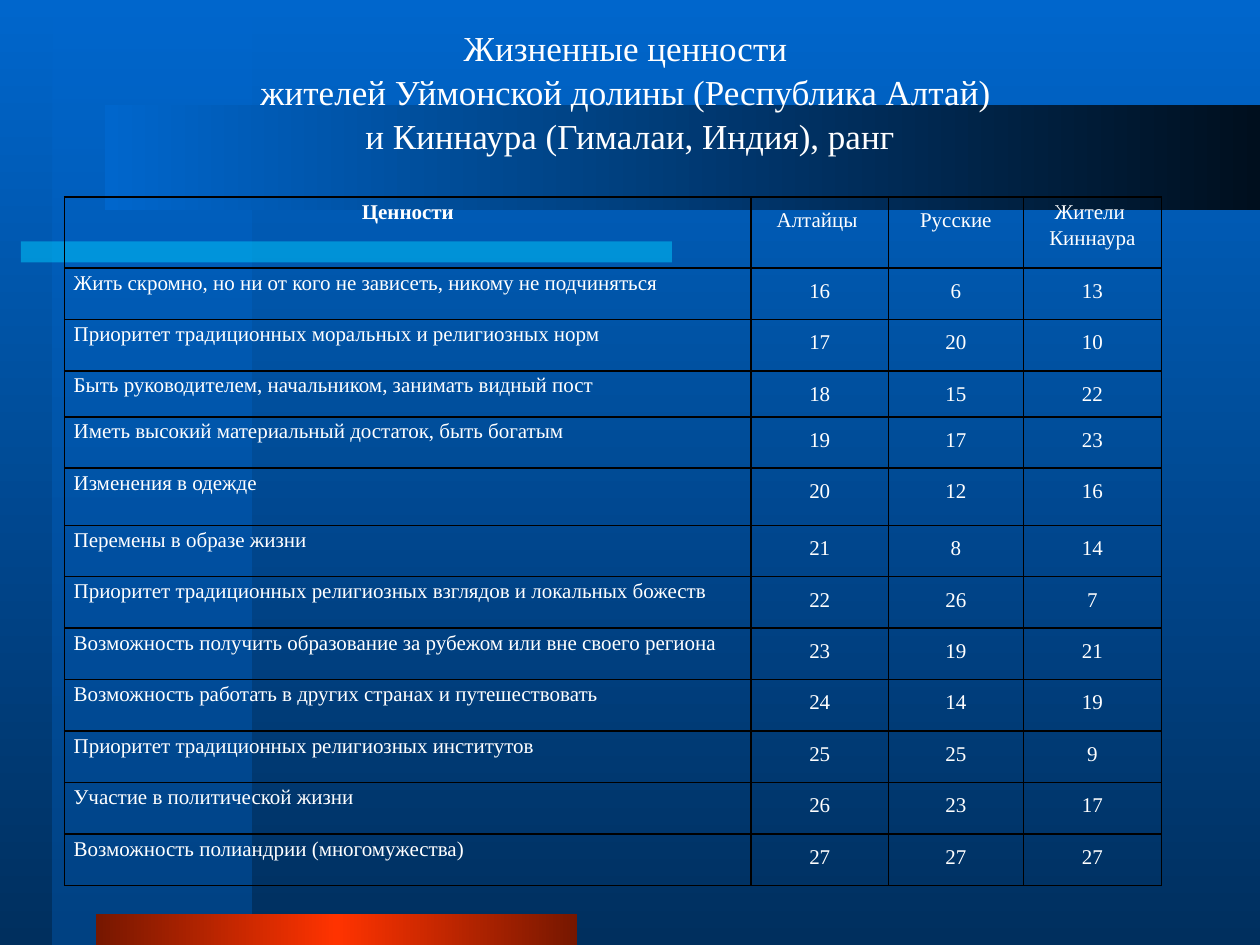
import copy

import lxml.etree
import pptx
import pptx.dml.color
import pptx.enum.shapes
import pptx.enum.text
import pptx.oxml.ns
import pptx.util

Pt = pptx.util.Pt
Color = pptx.dml.color.RGBColor
Align = pptx.enum.text.PP_ALIGN
Anchor = pptx.enum.text.MSO_ANCHOR
qn = pptx.oxml.ns.qn

WHITE = Color(0xFF, 0xFF, 0xFF)
BLACK = Color(0x00, 0x00, 0x00)
BLUE = Color(0x00, 0x66, 0xCC)
MID_BLUE = Color(0x00, 0x53, 0xA6)
NAVY = Color(0x00, 0x2F, 0x5E)
NIGHT = Color(0x00, 0x0F, 0x1E)
CYAN = Color(0x00, 0xCC, 0xFF)
RED = Color(0xFF, 0x33, 0x00)
DARK_RED = Color(0x76, 0x17, 0x00)
FONT = "Times New Roman"

TITLE = (
    "Жизненные ценности \v"
    "жителей Уймонской долины (Республика Алтай) \v"
    "и Киннаура (Гималаи, Индия), ранг"
)
HEADINGS = ["Ценности", "Алтайцы ", "Русские", "Жители \nКиннаура"]
RANKS = [
    ("Жить скромно, но ни от кого не зависеть, никому не подчиняться", 16, 6, 13),
    ("Приоритет традиционных моральных и религиозных норм", 17, 20, 10),
    ("Быть руководителем, начальником, занимать видный пост", 18, 15, 22),
    ("Иметь высокий материальный достаток, быть богатым", 19, 17, 23),
    ("Изменения в одежде", 20, 12, 16),
    ("Перемены в образе жизни", 21, 8, 14),
    ("Приоритет традиционных религиозных взглядов и локальных божеств", 22, 26, 7),
    ("Возможность получить образование за рубежом или вне своего региона", 23, 19, 21),
    ("Возможность работать в других странах и путешествовать", 24, 14, 19),
    ("Приоритет традиционных религиозных институтов", 25, 25, 9),
    ("Участие в политической жизни", 26, 23, 17),
    ("Возможность полиандрии (многомужества)", 27, 27, 27),
]
COLUMN_WIDTHS = [392.3, 78.5, 77.1, 79]
ROW_HEIGHT = 29.4
SPECIAL_ROW_HEIGHTS = {0: 40.6, 3: 26.3, 5: 32.6}


def write_text(frame, text, size=12, bold=False, align=Align.CENTER, spacing=1.5):
    """Fill a text frame, one paragraph for each line of the text."""
    frame.text = text
    for para in frame.paragraphs:
        para.alignment = align
        para.line_spacing = spacing
        for span in para.runs:
            span.font.name = FONT
            span.font.size = Pt(size)
            span.font.bold = bold
            span.font.color.rgb = WHITE
        for line_break in frame._txBody.iter(qn("a:br")):
            line_break.append(copy.deepcopy(span.font._element))


def set_alpha(color_element, percent):
    """Give a colour element an opacity in percent."""
    alpha = lxml.etree.SubElement(color_element, qn("a:alpha"))
    alpha.set("val", str(percent * 1000))


def paint_gradient(element, fill, colors, angle=0, opacity=100):
    """Fill with evenly spaced gradient colours."""
    fill.gradient()
    fill.gradient_angle = angle
    stops = element.find(".//" + qn("a:gsLst"))
    for stop in list(stops):
        stops.remove(stop)
    for index, color in enumerate(colors):
        stop = lxml.etree.SubElement(stops, qn("a:gs"))
        stop.set("pos", str(100000 * index // (len(colors) - 1)))
        value = lxml.etree.SubElement(stop, qn("a:srgbClr"), val=str(color))
        if opacity < 100:
            set_alpha(value, opacity)


def add_panel(page, left, top, width, height, colors, angle=0, opacity=100):
    """Add a borderless rectangle with a plain or gradient fill."""
    panel = page.shapes.add_shape(
        pptx.enum.shapes.MSO_SHAPE.RECTANGLE, Pt(left), Pt(top), Pt(width), Pt(height)
    )
    panel.shadow.inherit = False
    panel.line.fill.background()
    if len(colors) > 1:
        paint_gradient(panel.element, panel.fill, colors, angle, opacity)
    else:
        panel.fill.solid()
        panel.fill.fore_color.rgb = colors[0]
        set_alpha(panel.element.spPr.find(".//" + qn("a:srgbClr")), opacity)


def add_backdrop(page, width, height):
    """Paint the background and its decorative bars."""
    paint_gradient(page.element, page.background.fill, [BLUE, NAVY], angle=270)
    add_panel(page, 30, 0, 114, height, [BLUE, MID_BLUE], angle=270, opacity=50)
    add_panel(page, 12, 138, 372, 12, [CYAN], opacity=50)
    add_panel(page, 54.6, height - 18, 275.4, 18, [DARK_RED, RED, DARK_RED])
    add_panel(page, 60, 60, width - 60, 60, [BLUE, NIGHT])


def place_title(page, left, top, width, height):
    """Move the title placeholder in front of the bars and fill it."""
    title = page.shapes.title
    title.element.getparent().append(title.element)
    title.left, title.top = Pt(left), Pt(top)
    title.width, title.height = Pt(width), Pt(height)
    frame = title.text_frame
    frame.word_wrap = True
    frame.auto_size = pptx.enum.text.MSO_AUTO_SIZE.NONE
    frame.vertical_anchor = Anchor.MIDDLE
    write_text(frame, TITLE, size=20, spacing=1.05)


def format_cell(cell):
    """Give a cell tight margins, no fill and thin black borders."""
    cell.margin_left = cell.margin_right = Pt(5.2)
    cell.margin_top = cell.margin_bottom = Pt(0)
    cell.vertical_anchor = Anchor.TOP
    cell.fill.background()
    properties = cell._tc.get_or_add_tcPr()
    for index, side in enumerate(("lnL", "lnR", "lnT", "lnB")):
        border = lxml.etree.Element(qn("a:" + side), w=str(Pt(1)))
        fill = lxml.etree.SubElement(border, qn("a:solidFill"))
        lxml.etree.SubElement(fill, qn("a:srgbClr"), val=str(BLACK))
        properties.insert(index, border)


def add_rank_table(page, left, top):
    """Add the table of values and their ranks in each group."""
    rows = [HEADINGS, *RANKS]
    heights = [SPECIAL_ROW_HEIGHTS.get(index, ROW_HEIGHT) for index in range(len(rows))]
    table = page.shapes.add_table(
        len(rows), len(HEADINGS), Pt(left), Pt(top), Pt(sum(COLUMN_WIDTHS)), Pt(sum(heights))
    ).table
    table.first_row = table.horz_banding = False
    for column, width in zip(table.columns, COLUMN_WIDTHS):
        column.width = Pt(width)
    for row_index, values in enumerate(rows):
        table.rows[row_index].height = Pt(heights[row_index])
        for column_index, value in enumerate(values):
            cell = table.cell(row_index, column_index)
            format_cell(cell)
            text = str(value)
            is_label = column_index == 0
            write_text(
                cell.text_frame,
                text,
                bold=is_label and row_index == 0,
                align=Align.LEFT if is_label and row_index else Align.CENTER,
                spacing=1.15 if is_label or "\n" in text else 1.5,
            )


def main():
    """Build the slide and save it."""
    deck = pptx.Presentation()
    width, height = 720, 540
    deck.slide_width, deck.slide_height = Pt(width), Pt(height)
    page = deck.slides.add_slide(deck.slide_layouts[5])
    add_backdrop(page, width, height)
    place_title(page, 54, 20.2, width - 108, 62.6)
    add_rank_table(page, 36.9, 112.5)
    deck.save("out.pptx")


if __name__ == "__main__":
    main()
